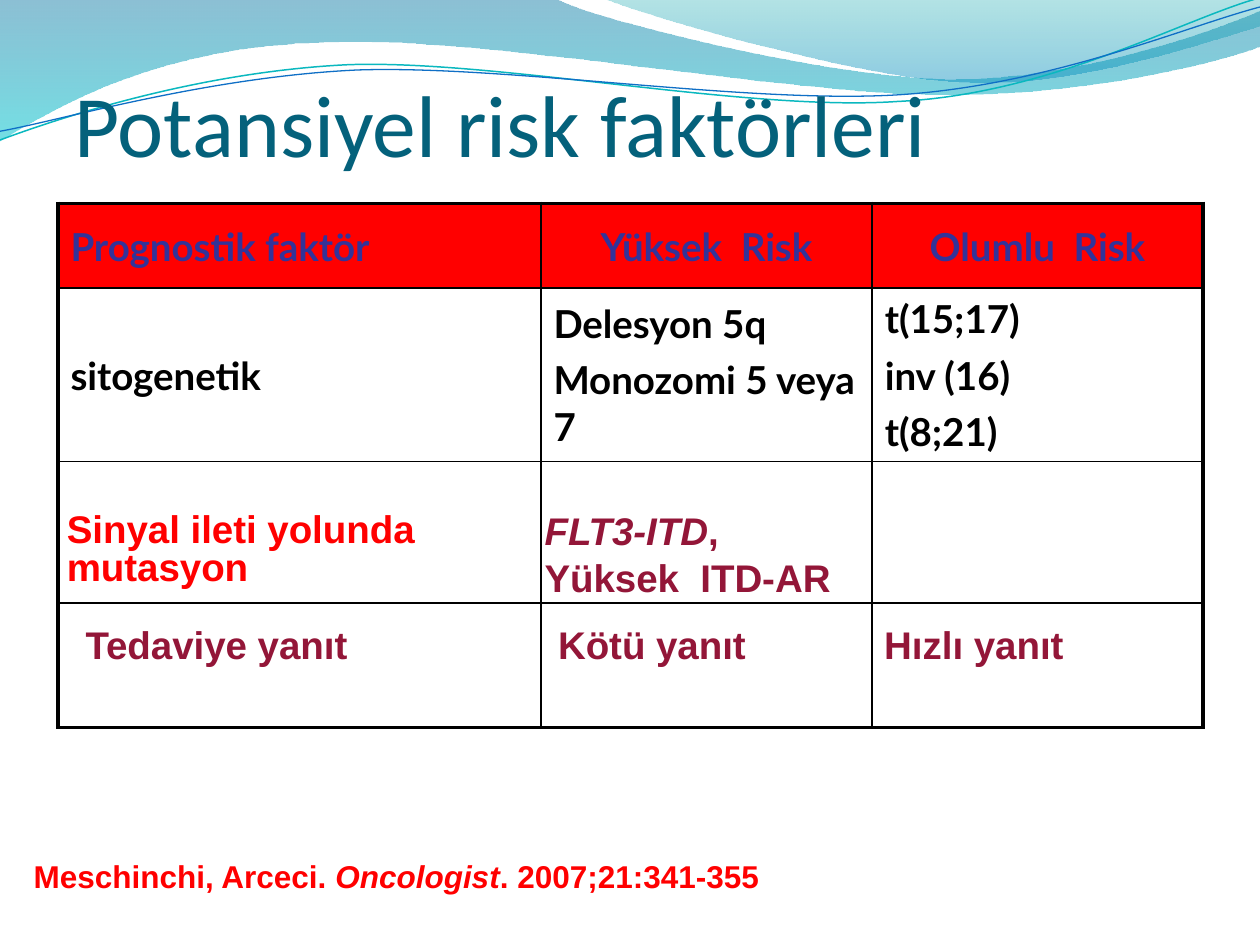
from lxml import etree
from pptx import Presentation
from pptx.dml.color import RGBColor
from pptx.enum.text import MSO_ANCHOR, PP_ALIGN
from pptx.oxml.ns import qn
from pptx.util import Pt

LEFT, CENTER = PP_ALIGN.LEFT, PP_ALIGN.CENTER
TOP, MIDDLE, BOTTOM = MSO_ANCHOR.TOP, MSO_ANCHOR.MIDDLE, MSO_ANCHOR.BOTTOM
BLACK = RGBColor(0, 0, 0)
RED = RGBColor(0xFF, 0, 0)
INDIGO = RGBColor(0x33, 0x33, 0x99)
WINE = RGBColor(0x93, 0x16, 0x38)
TITLE_TEAL = RGBColor(0x04, 0x61, 0x7B)
WAVE_TEAL = RGBColor(0x0A, 0xB8, 0xBF)
WAVE_BLUE = RGBColor(0x0F, 0x6F, 0xC6)
NO_GRID_STYLE = "{2D5ABB26-0587-4C30-8999-92F81FD0307C}"

BANDS = [
    ([(0, 0), (317, -1), (343, 12, 478, 45, 546, 45), (614, 45, 690, 19, 720, 6),
      (721, 26), (708, 32, 626, 55, 537, 54), (448, 54, 275, 20, 185, 24),
      (93, 26, 33, 60, -1, 81)],
     [(RGBColor(0, 0x74, 0xA1), 45), (RGBColor(0, 0xC6, 0xCF), 55)]),
    ([(345, -1), (366, 8, 491, 45, 554, 47), (616, 50, 692, 23, 720, 15), (720, 0)],
     [(RGBColor(0, 0xA1, 0xA9), 30), (RGBColor(0, 0x8B, 0xBF), 45)]),
]
WAVES = [
    ([(0, 80), (35, 67, 114, 41, 199, 37), (284, 34, 427, 64, 513, 58),
      (600, 54, 676, 11, 719, -1)], WAVE_TEAL, 0.85),
    ([(0, 75), (34, 69, 118, 44, 204, 40), (290, 37, 430, 60, 516, 54),
      (602, 48, 678, 15, 720, 4)], WAVE_BLUE, 0.75),
]
TITLE = "Potansiyel risk faktörleri"
RISKS = [
    [["Prognostik faktör"], ["Yüksek  Risk"], ["Olumlu  Risk"]],
    [["sitogenetik"], ["Delesyon 5q", "Monozomi 5 veya 7"],
     ["t(15;17)", "inv (16)", "t(8;21)"]],
    [[], [], []],
    [[], [], []],
]
RISK_COLUMNS = [276, 189.3, 189]
RISK_ROWS = [48.5, 97, 81, 71.3]
MUTATIONS = [
    ([[("Sinyal ileti yolunda mutasyon", False)]], RED, 13.8, 18.4),
    ([[("FLT3-ITD", True), (",", False)], [("Yüksek  ITD-AR", False)]], WINE, 5.5, 26.4),
]
MUTATION_COLUMNS = [273, 196]
RESPONSES = [("Tedaviye yanıt", 41.8, 252, 34, 13.8),
             ("Kötü yanıt", 311.8, 192, 75, 5.5),
             ("Hızlı yanıt", 498.2, 198, 75, 5.5)]
CITATION = [("Meschinchi, Arceci. ", False), ("Oncologist", True),
            (". 2007;21:341-355", False)]


def add_outline(segments, close):
    points = [(Pt(segment[i]), Pt(segment[i + 1]))
              for segment in segments for i in range(0, len(segment), 2)]
    builder = slide.shapes.build_freeform(*points[0], scale=1.0)
    builder.add_line_segments(points[1:], close=close)
    outline = builder.convert_to_shape()
    outline.shadow.inherit = False
    steps = iter(list(outline._element.iter(qn("a:lnTo"))))
    for segment in segments[1:]:
        step = next(steps)
        if len(segment) == 6:
            step.addprevious(curve := etree.Element(qn("a:cubicBezTo")))
            for control in (step, next(steps), next(steps)):
                curve.append(control[0])
                control.getparent().remove(control)
    return outline


def write(frame, paragraphs, size, font, color, before=0,
          bold=True, align=LEFT, spacing=None):
    for index, runs in enumerate(paragraphs):
        paragraph = frame.paragraphs[0] if index == 0 else frame.add_paragraph()
        paragraph.alignment = align
        paragraph.space_before = Pt(before)
        if spacing:
            paragraph.line_spacing = spacing
        style = paragraph.font
        style.size, style.name, style.bold = Pt(size), font, bold
        style.color.rgb = color
        for text, italic in runs:
            run = paragraph.add_run()
            run.text = text
            if italic:
                run.font.italic = True


def add_text(left, top, width, height, anchor=TOP):
    frame = slide.shapes.add_textbox(Pt(left), Pt(top), Pt(width), Pt(height)).text_frame
    frame.word_wrap = True
    frame.vertical_anchor = anchor
    return frame


def add_grid(left, top, columns, rows):
    frame = slide.shapes.add_table(len(rows), len(columns), Pt(left), Pt(top),
                                   Pt(sum(columns)), Pt(sum(rows)))
    table = frame.table
    table.first_row = table.horz_banding = False
    table._tbl.tblPr.find(qn("a:tableStyleId")).text = NO_GRID_STYLE
    for column, width in zip(table.columns, columns):
        column.width = Pt(width)
    for row, height in zip(table.rows, rows):
        row.height = Pt(height)
    for cell in table.iter_cells():
        cell.fill.background()
        cell.vertical_anchor = MIDDLE
    return table


def set_borders(cell, widths):
    properties = cell._tc.get_or_add_tcPr()
    for index, (side, width) in enumerate(widths):
        line = etree.Element(qn("a:" + side), w=str(Pt(width)))
        fill = etree.SubElement(line, qn("a:solidFill"))
        etree.SubElement(fill, qn("a:srgbClr"), val=str(BLACK))
        properties.insert(index, line)


presentation = Presentation()
presentation.slide_width, presentation.slide_height = Pt(720), Pt(540)
slide = presentation.slides.add_slide(presentation.slide_layouts[6])

for segments, stops in BANDS:
    band = add_outline(segments, True)
    band.line.fill.background()
    band.fill.gradient()
    band.fill.gradient_angle = 270
    for stop, position, (color, opacity) in zip(band.fill.gradient_stops, (0, 1), stops):
        stop.position = position
        stop.color.rgb = color
    for tint, (color, opacity) in zip(band._element.spPr.iter(qn("a:srgbClr")), stops):
        etree.SubElement(tint, qn("a:alpha"), val=str(opacity * 1000))

for segments, color, width in WAVES:
    wave = add_outline(segments, False)
    wave.fill.background()
    wave.line.color.rgb = color
    wave.line.width = Pt(width)

title = add_text(42.5, 26.4, 639, 73.4, BOTTOM)
title.margin_left = title.margin_right = title.margin_bottom = 0
write(title, [[(TITLE, False)]], 50, "Calibri", TITLE_TEAL, bold=False)

risk_table = add_grid(33.1, 116.2, RISK_COLUMNS, RISK_ROWS)
last_row, last_column = len(RISK_ROWS) - 1, len(RISK_COLUMNS) - 1
for r, row in enumerate(RISKS):
    for c, lines in enumerate(row):
        cell = risk_table.cell(r, c)
        header = r == 0
        if header:
            cell.fill.solid()
            cell.fill.fore_color.rgb = RED
        write(cell.text_frame, [[(line, False)] for line in lines], 22, "Lato",
              INDIGO if header else BLACK, 5.5,
              align=CENTER if header and c else LEFT, spacing=1.02)
        edges = [("lnL", c == 0), ("lnR", c == last_column),
                 ("lnT", r == 0), ("lnB", r == last_row)]
        set_borders(cell, [(side, 2.25 if outer else 1) for side, outer in edges])

write(add_text(12.2, 486, 522, 29), [CITATION], 18, "Arial", RED, 11.2)

mutation_table = add_grid(31, 258.5, MUTATION_COLUMNS, [98])
for cell, (paragraphs, color, before, inset) in zip(mutation_table.iter_cells(), MUTATIONS):
    cell.margin_top = Pt(inset)
    write(cell.text_frame, paragraphs, 22, "Arial", color, before, spacing=0.87)

for text, left, width, height, before in RESPONSES:
    write(add_text(left, 351.4, width, height), [[(text, False)]], 22, "Arial", WINE, before)

presentation.save("out.pptx")
